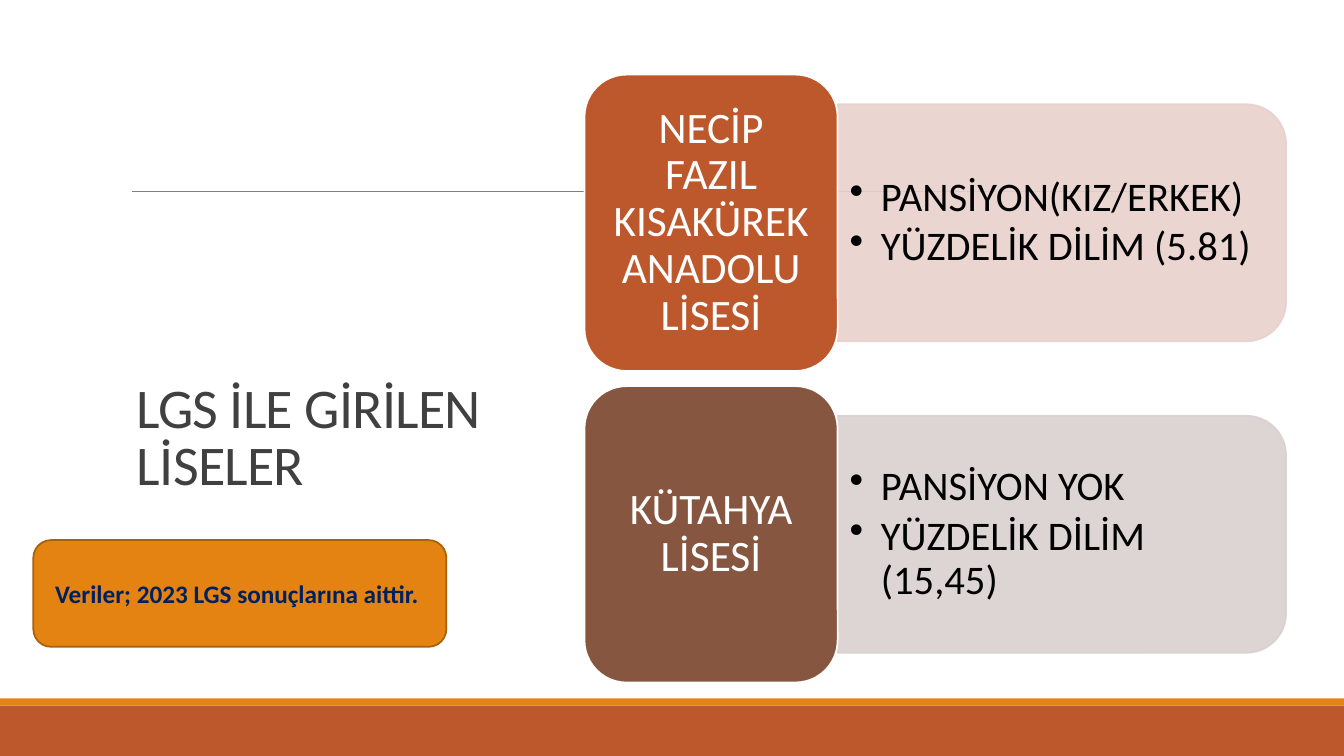
from typing import NamedTuple

from lxml.etree import SubElement
from pptx import Presentation
from pptx.dml.color import RGBColor
from pptx.enum.shapes import MSO_CONNECTOR as Connector, MSO_SHAPE as Shape
from pptx.enum.text import MSO_ANCHOR as Anchor, PP_ALIGN as Align
from pptx.oxml.ns import qn
from pptx.util import Cm, Pt

SCHOOLS = [
    ("NECİP FAZIL KISAKÜREK ANADOLU LİSESİ", "BD582C", "E8D1CD",
     ["PANSİYON(KIZ/ERKEK)", "YÜZDELİK DİLİM (5.81)"]),
    ("KÜTAHYA LİSESİ", "865640", "D9D1CF",
     ["PANSİYON YOK", "YÜZDELİK DİLİM (15,45)"]),
]


class Box(NamedTuple):
    """A rectangle in centimetres."""
    left: float
    top: float
    width: float
    height: float

    def lengths(self):
        """Return the four sides as slide lengths."""
        return [Cm(side) for side in self]


def rgb(code):
    """Turn a hex string into a colour."""
    return RGBColor.from_string(code)


def set_all(target, values):
    """Set each named attribute on the target."""
    for name, value in values.items():
        setattr(target, name, value)


def add_block(page, kind, box, fill, line=None):
    """Add a flat filled shape with an optional outline."""
    block = page.shapes.add_shape(kind, *box.lengths())
    block.shadow.inherit = False
    block.fill.solid()
    block.fill.fore_color.rgb = rgb(fill)
    if line:
        block.line.color.rgb = rgb(line)
        block.line.width = Pt(1.25)
    else:
        block.line.fill.background()
    return block


def write(shape, texts, color, size, frame_format, para_format, bold=False):
    """Write one paragraph per text and return the paragraphs."""
    frame = shape.text_frame
    set_all(frame, {"word_wrap": True, **frame_format})
    paras = [frame.paragraphs[0]] + [frame.add_paragraph() for _ in texts[1:]]
    for para, text in zip(paras, texts):
        set_all(para, para_format)
        span = para.add_run()
        span.text = text
        set_all(span.font, {"name": "Calibri", "size": Pt(size), "bold": bold})
        span.font.color.rgb = rgb(color)
    return paras


def add_bullet(para):
    """Give the paragraph a bullet with a hanging indent."""
    properties = para._p.get_or_add_pPr()
    properties.set("marL", str(Cm(0.79)))
    properties.set("indent", str(-Cm(0.79)))
    SubElement(properties, qn("a:buChar"), char="•")


def add_backdrop(page, box):
    """Draw the footer bands and the thin rule."""
    band_top, stripe = box.height - 1.27, 0.18
    add_block(page, Shape.RECTANGLE, Box(0, band_top, box.width, 1.27), "BD582C")
    add_block(page, Shape.RECTANGLE,
              Box(0, band_top - stripe, box.width, stripe), "E48312")
    rule = page.shapes.add_connector(
        Connector.STRAIGHT, Cm(3.33), Cm(4.82), Cm(31.01), Cm(4.82))
    rule.line.color.rgb = rgb("808080")
    rule.line.width = Pt(0.5)
    SubElement(rule._element.spPr, qn("a:effectLst"))


def add_title(page, box):
    """Write the slide title at the bottom of its box."""
    title = page.shapes.add_textbox(*box.lengths())
    paras = write(title, ["LGS İLE GİRİLEN LİSELER"], "404040", 40,
                  {"vertical_anchor": Anchor.BOTTOM}, {"line_spacing": 0.85})
    paras[0].runs[0].font._element.set("spc", "-50")


def add_plate(page, box, color):
    """Draw a translucent plate rounded on its right side."""
    shift = (box.width - box.height) / 2
    upright = Box(box.left + shift, box.top - shift, box.height, box.width)
    plate = add_block(page, Shape.ROUND_2_SAME_RECTANGLE, upright, color, color)
    plate.rotation = 90
    for tint in plate._element.spPr.iter(qn("a:srgbClr")):
        SubElement(tint, qn("a:alpha"), val="90000")


def add_school(page, box, name, color, tint, facts):
    """Draw one school card with its plate of facts."""
    card_width, plate_height, text_height = 6.38, 5.97, 5.38
    left, middle = box.left + card_width, box.top + box.height / 2
    plate_width = box.width - card_width
    add_plate(page, Box(left, middle - plate_height / 2, plate_width, plate_height), tint)
    text_box = Box(left, middle - text_height / 2, plate_width - 0.28, text_height)
    margins = {"margin_top": Cm(0.15), "margin_bottom": Cm(0.15),
               "vertical_anchor": Anchor.MIDDLE}
    paras = write(page.shapes.add_textbox(*text_box.lengths()), facts, "000000", 29,
                  {**margins, "margin_left": Cm(0.3), "margin_right": Cm(0.3)},
                  {"line_spacing": 0.9, "space_after": Pt(4.35)})
    for para in paras:
        add_bullet(para)
    card = add_block(page, Shape.ROUNDED_RECTANGLE,
                     box._replace(width=card_width), color, "FFFFFF")
    write(card, [name], "FFFFFF", 31,
          {**margins, "margin_left": Cm(0.32), "margin_right": Cm(0.32)},
          {"line_spacing": 0.9, "alignment": Align.CENTER})


def add_schools(page, box):
    """Stack the school cards with equal gaps."""
    gap = 0.38
    height = (box.height - gap * (len(SCHOOLS) - 1)) / len(SCHOOLS)
    for index, school in enumerate(SCHOOLS):
        top = box.top + index * (height + gap)
        add_school(page, box._replace(top=top, height=height), *school)


def add_note(page, box):
    """Draw the note on the source of the figures."""
    note = add_block(page, Shape.ROUNDED_RECTANGLE, box, "E48312", "A9610D")
    write(note, ["Veriler; 2023 LGS sonuçlarına aittir. "], "002060", 18,
          {"vertical_anchor": Anchor.MIDDLE}, {"alignment": Align.CENTER}, bold=True)


def main():
    """Build the slide and save the deck."""
    deck = Presentation()
    set_all(deck, {"slide_width": Cm(33.87), "slide_height": Cm(19.05)})
    page = deck.slides.add_slide(deck.slide_layouts[6])
    add_backdrop(page, Box(0, 0, 33.87, 19.05))
    add_title(page, Box(3.2, 6.43, 10, 6.22))
    add_schools(page, Box(14.73, 1.88, 17.68, 15.32))
    add_note(page, Box(0.84, 13.61, 10.41, 2.69))
    deck.save("out.pptx")


if __name__ == "__main__":
    main()
